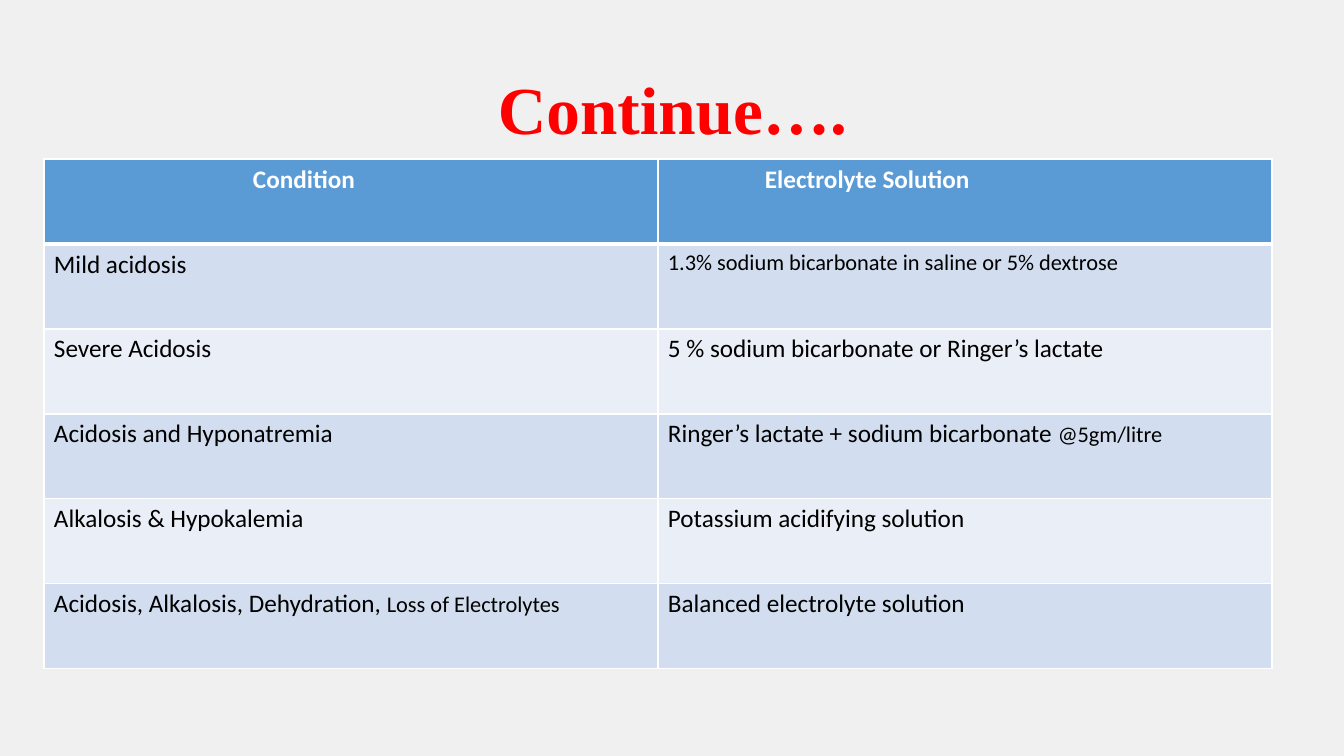
"""Build the slide that pairs acid-base conditions with electrolyte solutions."""
from dataclasses import dataclass
from typing import Any

from lxml import etree
from pptx import Presentation
from pptx import util as u
from pptx.dml.color import RGBColor
from pptx.enum import text
from pptx.oxml.ns import qn


@dataclass(frozen=True)
class Theme:
    back: str = "F1F0F0"
    title: str = "FF0000"
    head: str = "5B9BD5"
    bands: tuple[str, str] = ("D2DEEF", "EAEFF7")
    white: str = "FFFFFF"
    black: str = "000000"
    serif: str = "Times New Roman"
    sans: str = "Calibri"
    big: int = 48
    base: int = 18
    small: int = 16
    thin: int = 1
    thick: int = 3


@dataclass(frozen=True)
class Run:
    text: str
    size: int


@dataclass(frozen=True)
class Cell:
    runs: tuple[Run, ...]
    fill: str
    color: str
    bold: bool = False
    inset: int = 10
    top: int = 1
    base: int = 1


@dataclass(frozen=True)
class Box:
    left: int
    top: int
    width: int
    height: int


T = Theme()
SLIDE = Box(0, 0, 1344, 756)
TITLE = Box(93, 40, 1159, 146)
GRID = Box(44, 159, 1228, 510)
HEADS = (("Condition", 209), ("Electrolyte Solution", 107))
ROWS = (
    ((Run("Mild acidosis", T.base),),
     (Run("1.3% sodium bicarbonate in saline or 5% dextrose", T.small),)),
    ((Run("Severe Acidosis", T.base),),
     (Run("5 % sodium bicarbonate or Ringer’s lactate", T.base),)),
    ((Run("Acidosis and Hyponatremia", T.base),),
     (Run("Ringer’s lactate + sodium bicarbonate ", T.base), Run("@5gm/litre", T.small))),
    ((Run("Alkalosis & Hypokalemia", T.base),),
     (Run("Potassium acidifying solution", T.base),)),
    ((Run("Acidosis, Alkalosis, Dehydration, ", T.base), Run("Loss of Electrolytes", T.small)),
     (Run("Balanced electrolyte solution", T.base),)),
)


def px(n: int) -> u.Emu:
    return u.Emu(round(n * 914400 / 100.8))


def style(item: Any, values: dict[str, Any]) -> None:
    for key, value in values.items():
        setattr(item, key, value)


def ink(font: Any, name: str, size: int, color: str, bold: bool) -> None:
    style(font, {"name": name, "size": u.Pt(size), "bold": bold})
    font.color.rgb = RGBColor.from_string(color)


def paint(fill: Any, color: str) -> None:
    fill.solid()
    fill.fore_color.rgb = RGBColor.from_string(color)


def edge(cell: Any, top: int, base: int) -> None:
    props = cell._tc.get_or_add_tcPr()
    sides = {"lnL": T.thin, "lnR": T.thin, "lnT": top, "lnB": base}
    for i, (side, width) in enumerate(sides.items()):
        line = etree.Element(qn(f"a:{side}"), w=str(u.Pt(width)))
        fill = etree.SubElement(line, qn("a:solidFill"))
        etree.SubElement(fill, qn("a:srgbClr"), val=T.white)
        props.insert(i, line)


def draw_cell(cell: Any, data: Cell) -> None:
    cell.margin_left = px(data.inset)
    para = cell.text_frame.paragraphs[0]
    for part in data.runs:
        run = para.add_run()
        run.text = part.text
        ink(run.font, T.sans, part.size, data.color, data.bold)
    paint(cell.fill, data.fill)
    edge(cell, data.top, data.base)


def draw_title(shape: Any) -> None:
    style(shape, {"left": px(TITLE.left), "top": px(TITLE.top),
                  "width": px(TITLE.width), "height": px(TITLE.height)})
    frame = shape.text_frame
    frame.text = "Continue…."
    style(frame, {"auto_size": text.MSO_AUTO_SIZE.NONE, "word_wrap": True,
                  "vertical_anchor": text.MSO_ANCHOR.MIDDLE})
    para = frame.paragraphs[0]
    style(para, {"alignment": text.PP_ALIGN.CENTER, "line_spacing": 0.9})
    ink(para.runs[0].font, T.serif, T.big, T.title, True)


def draw_grid(slide: Any) -> None:
    cells = [[Cell((Run(name, T.base),), T.head, T.white, True, inset, base=T.thick)
              for name, inset in HEADS]]
    for i, row in enumerate(ROWS):
        top = T.thin if i else T.thick
        cells.append([Cell(runs, T.bands[i % 2], T.black, top=top) for runs in row])
    table = slide.shapes.add_table(len(cells), len(HEADS), px(GRID.left), px(GRID.top),
                                   px(GRID.width), px(GRID.height)).table
    for r, row in enumerate(cells):
        for c, data in enumerate(row):
            draw_cell(table.cell(r, c), data)


def main() -> None:
    deck = Presentation()
    style(deck, {"slide_width": px(SLIDE.width), "slide_height": px(SLIDE.height)})
    slide = deck.slides.add_slide(deck.slide_layouts[5])
    paint(slide.background.fill, T.back)
    draw_title(slide.shapes.title)
    draw_grid(slide)
    deck.save("out.pptx")


if __name__ == "__main__":
    main()
